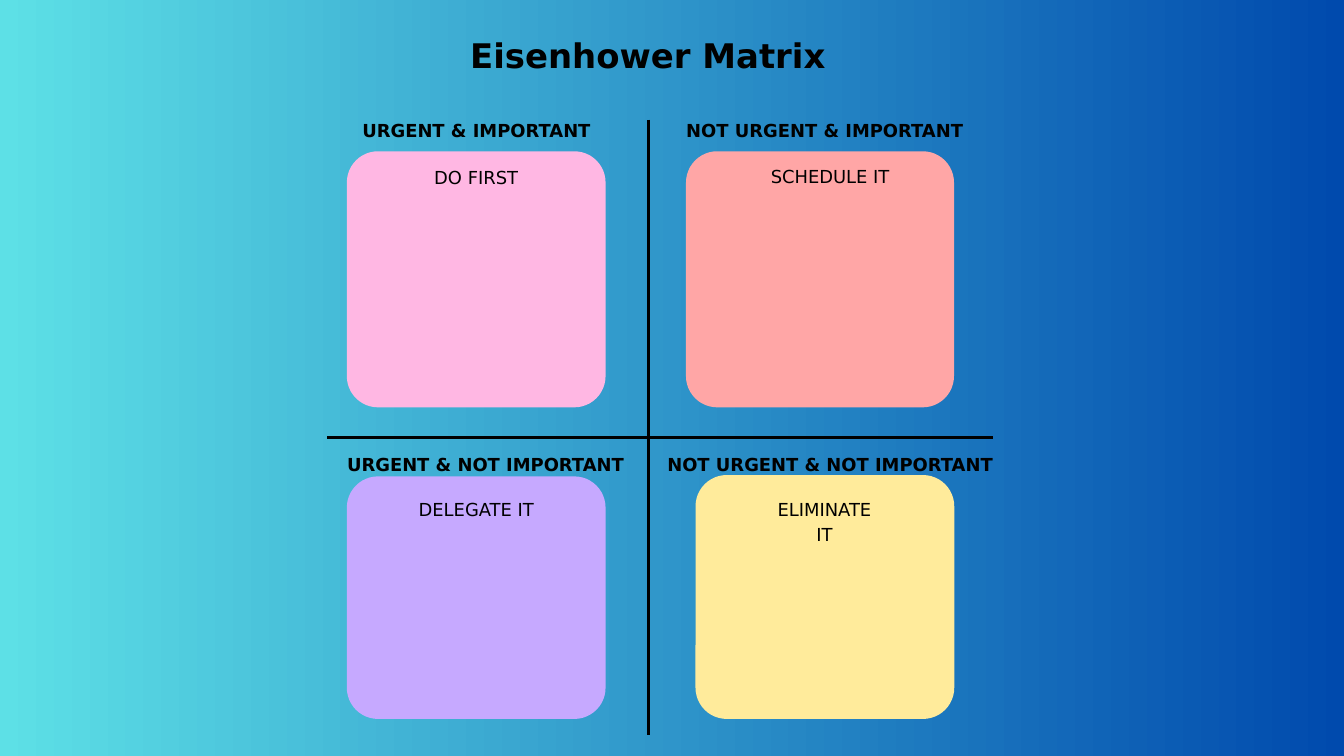
from lxml.etree import SubElement
from pptx import Presentation
from pptx.dml.color import RGBColor
from pptx.enum.shapes import MSO_CONNECTOR, MSO_SHAPE
from pptx.enum.text import MSO_ANCHOR, PP_ALIGN
from pptx.oxml.ns import qn
from pptx.util import Cm, Pt


def colour(value):
    return RGBColor.from_string(value)


def write(holder, text, size, leading, bold):
    frame = holder.text_frame
    frame.text = text
    frame_format = dict(margin_left=0, margin_top=0, margin_right=0, margin_bottom=0,
                        word_wrap=False, vertical_anchor=MSO_ANCHOR.TOP)
    for name, value in frame_format.items():
        setattr(frame, name, value)
    paragraph = frame.paragraphs[0]
    for name, value in dict(alignment=PP_ALIGN.CENTER, line_spacing=Pt(leading), space_before=Pt(0)).items():
        setattr(paragraph, name, value)
    font = paragraph.runs[0].font
    for name, value in dict(name="DejaVu Sans", size=Pt(size), bold=bold).items():
        setattr(font, name, value)
    font.color.rgb = colour("000000")


deck = Presentation()
deck.slide_width, deck.slide_height = Cm(50.8), Cm(28.58)
slide = deck.slides.add_slide(deck.slide_layouts[5])

backdrop = slide.background.fill
backdrop.gradient()
backdrop.gradient_angle = 0
for stop, position, shade in zip(backdrop.gradient_stops, (0, 1), ("5DE0E6", "004AAD")):
    stop.position = position
    stop.color.rgb = colour(shade)

title = slide.shapes.title
for name, value in dict(left=15.62, top=1.07, width=17.75, height=1.7).items():
    setattr(title, name, Cm(value))
write(title, "Eisenhower Matrix", 36.3, 50.8, True)

corner_radius = 1.18
quadrants = [
    ("URGENT & IMPORTANT", (13.69, 4.39, 8.64), "DO FIRST", (16.41, 6.17, 3.18),
     "FFB7E3", (13.11, 5.72, 9.78, 9.68)),
    ("NOT URGENT & IMPORTANT", (25.93, 4.39, 10.49), "SCHEDULE IT", (29.13, 6.12, 4.5),
     "FFA6A6", (25.93, 5.72, 10.13, 9.68)),
    ("URGENT & NOT IMPORTANT", (13.11, 17.02, 10.49), "DELEGATE IT", (15.82, 18.72, 4.37),
     "C6A9FF", (13.11, 18.01, 9.78, 9.17)),
    ("NOT URGENT & NOT IMPORTANT", (25.22, 17.02, 12.32), "ELIMINATE IT", (28.98, 18.72, 4.37),
     "FFEB9B", (26.29, 17.96, 9.78, 9.22)),
]
for heading, heading_place, action, action_place, shade, card_place in quadrants:
    card = slide.shapes.add_shape(MSO_SHAPE.ROUNDED_RECTANGLE, *map(Cm, card_place))
    card.adjustments[0] = corner_radius / min(card_place[2:])
    card.shadow.inherit = False
    card.fill.solid()
    card.fill.fore_color.rgb = colour(shade)
    card.line.fill.background()
    for text, place, height, bold in ((heading, heading_place, 1.85, True), (action, action_place, 0.91, False)):
        label = slide.shapes.add_textbox(*map(Cm, place), Cm(height))
        write(label, text, 19.2, 26.9, bold)

for ends in ((12.37, 16.54, 37.54, 16.54), (24.51, 4.52, 24.51, 27.79)):
    axis = slide.shapes.add_connector(MSO_CONNECTOR.STRAIGHT, *map(Cm, ends))
    axis.line.color.rgb = colour("000000")
    axis.line.width = Pt(3)
    SubElement(axis._element.spPr, qn("a:effectLst"))

deck.save("out.pptx")
